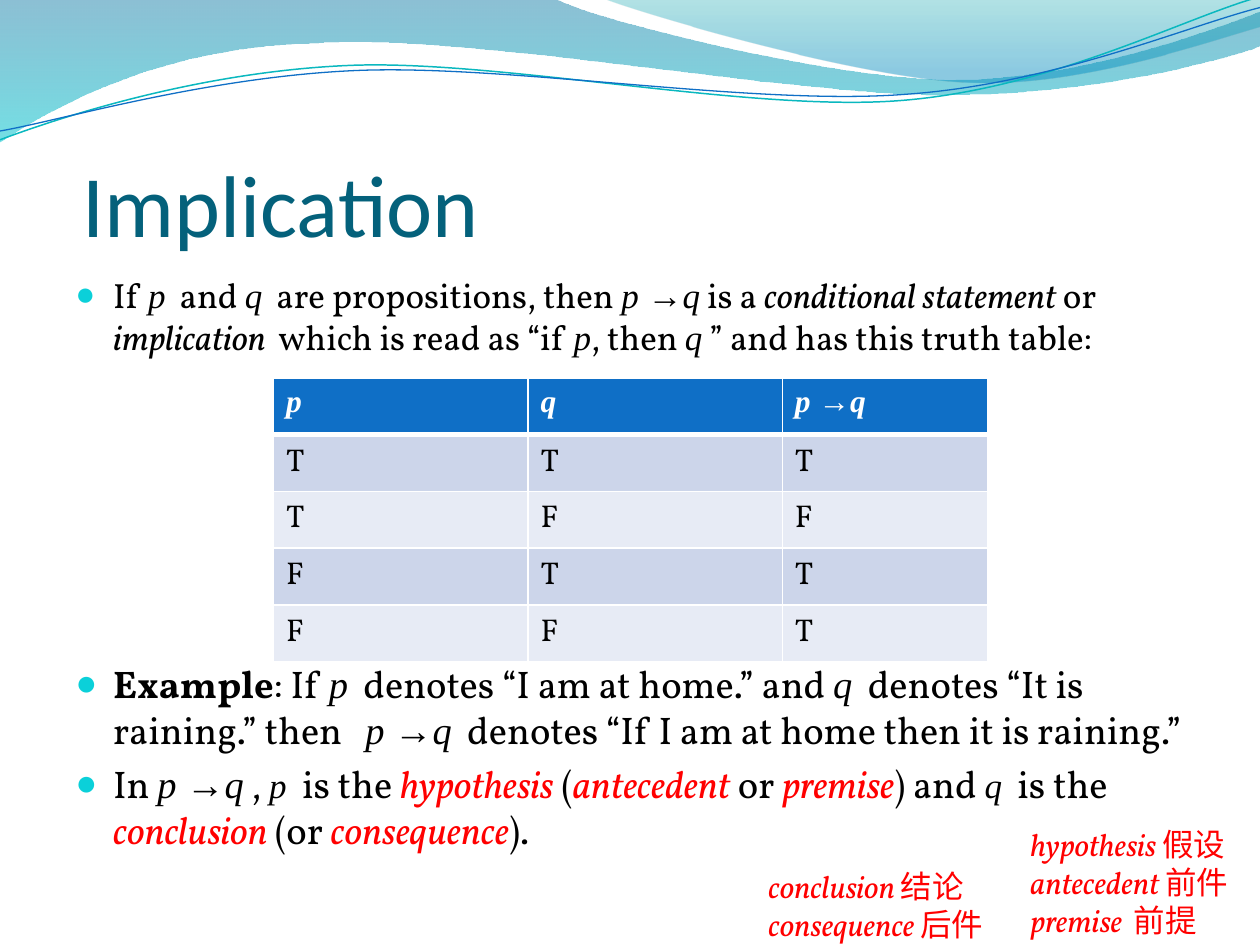
from lxml.etree import SubElement
from pptx import Presentation
from pptx.dml.color import RGBColor
from pptx.enum.text import MSO_ANCHOR
from pptx.oxml.ns import qn
from pptx.util import Inches, Pt

WHITE = RGBColor(0xFF, 0xFF, 0xFF)
BLACK = RGBColor(0x00, 0x00, 0x00)
RED = RGBColor(0xFF, 0x00, 0x00)
TITLE = RGBColor(0x04, 0x61, 0x7B)
DOT = RGBColor(0x0B, 0xD0, 0xD9)
BLUE = RGBColor(0x0F, 0x6F, 0xC6)
TEAL = RGBColor(0x0A, 0xB8, 0xBF)
BANDS = RGBColor(0xCC, 0xD5, 0xEA), RGBColor(0xE7, 0xEB, 0xF5)
DEEP = RGBColor(0x00, 0x74, 0xA1)
AQUA = RGBColor(0x00, 0xC6, 0xCF)
SEA = RGBColor(0x00, 0xA1, 0xA9)
SKY = RGBColor(0x00, 0x8B, 0xBF)

SERIF, MATH, SANS = "Vollkorn", "Times New Roman", "Calibri"
STYLES = {
    "text": (SERIF, False, False),
    "term": (SERIF, True, False),
    "key": (SERIF, True, False),
    "bold": (SERIF, False, True),
    "var": (MATH, True, False),
    "small": (MATH, True, False),
    "sign": (MATH, False, False),
    "title": (SANS, False, False),
}
ARROW = [("p ", "var"), ("→", "sign"), ("q", "var")]

INTRO = [
    ("If ", "text"), ("p", "var"), ("  and ", "text"), ("q", "var"),
    ("  are propositions, then ", "text"), *ARROW, (" is a ", "text"),
    ("conditional statement ", "term"), ("or ", "text"),
    ("implication ", "term"), (" which is read as “if ", "text"),
    ("p", "var"), (", then ", "text"), ("q", "var"),
    (" ” and has this truth table:", "text"),
]
EXAMPLE = [
    ("Example", "bold"), (": If ", "text"), ("p", "var"),
    ("  denotes “I am at home.” and ", "text"), ("q", "var"),
    ("  denotes “It is raining.” then   ", "text"), *ARROW,
    ("  denotes “If I am at home then it is raining.”", "text"),
]
PARTS = [
    ("In ", "text"), *ARROW, (" , ", "text"), ("p", "small"),
    ("  is the ", "text"), ("hypothesis", "key"), (" (", "text"),
    ("antecedent", "key"), (" or ", "text"), ("premise", "key"),
    (") and ", "text"), ("q", "small"), ("  is the ", "text"),
    ("conclusion", "key"), (" (or ", "text"), ("consequence", "key"),
    (").", "text"),
]
BODY = [(INTRO, 20, 3.4), (EXAMPLE, 22, 173), (PARTS, 22, 4.4)]
HEADS = [[("p", "var")], [("q", "var")], ARROW]
TRUTH = ["TTT", "TFF", "FTT", "FFT"]

BAND = [
    [(0, 0)],
    [(4.4, -0.01)],
    [(4.76, 0.17), (6.64, 0.63), (7.58, 0.63)],
    [(8.53, 0.63), (9.58, 0.26), (10, 0.09)],
    [(10.01, 0.36)],
    [(9.83, 0.44), (8.7, 0.76), (7.46, 0.75)],
    [(6.22, 0.75), (3.82, 0.28), (2.57, 0.34)],
    [(1.29, 0.36), (0.46, 0.83), (-0.01, 1.13)],
    [(0, 0)],
]
CREST = [
    [(4.79, -0.01)],
    [(5.09, 0.11), (6.82, 0.62), (7.69, 0.65)],
    [(8.56, 0.69), (9.61, 0.32), (10, 0.21)],
    [(10, 0)],
    [(4.79, -0.01)],
]
UPPER = [
    [(0, 1.11)],
    [(0.48, 0.93), (1.58, 0.57), (2.77, 0.52)],
    [(3.95, 0.47), (5.93, 0.89), (7.13, 0.8)],
    [(8.33, 0.71), (9.38, 0.15), (9.98, -0.02)],
]
LOWER = [
    [(0, 1.04)],
    [(0.47, 0.96), (1.64, 0.61), (2.83, 0.56)],
    [(4.03, 0.51), (5.97, 0.84), (7.17, 0.75)],
    [(8.36, 0.67), (9.41, 0.21), (10, 0.06)],
]


def trace(slide, box, steps, close):
    left, top = box
    dots = [(left + Inches(x), top + Inches(y))
            for step in steps for x, y in step]
    pen = slide.shapes.build_freeform(*dots[0])
    pen.add_line_segments(dots[1:], close=close)
    shape = pen.convert_to_shape()
    shape.shadow.inherit = False
    lines = iter(list(shape._element.iter(qn("a:lnTo"))))
    for step in steps[1:]:
        nodes = [next(lines) for _ in step]
        if len(nodes) == 3:
            nodes[0].addprevious(curve := SubElement(
                nodes[0].getparent(), qn("a:cubicBezTo")))
            for node in nodes:
                curve.append(node[0])
                node.getparent().remove(node)
    return shape


def add_waves(slide, box):
    fills = [(BAND, [(0, DEEP, 45), (1, AQUA, 55)]),
             (CREST, [(0, SEA, 30), (0.8, SKY, 45)])]
    for steps, stops in fills:
        shape = trace(slide, box, steps, True)
        shape.line.fill.background()
        shape.fill.gradient()
        shape.fill.gradient_angle = 270
        for stop, (place, color, _) in zip(shape.fill.gradient_stops, stops):
            stop.position = place
            stop.color.rgb = color
        for node, (_, _, part) in zip(shape._element.iter(qn("a:gs")), stops):
            SubElement(node[0], qn("a:alpha"), val=str(part * 1000))
    for steps, color, width in [(UPPER, TEAL, 0.85), (LOWER, BLUE, 0.75)]:
        shape = trace(slide, box, steps, False)
        shape.fill.background()
        shape.line.color.rgb = color
        shape.line.width = Pt(width)


def add_runs(par, runs, size, color=BLACK):
    for text, style in runs:
        run = par.add_run()
        run.text = text
        font = run.font
        font.name, font.italic, bold = STYLES[style]
        font.bold = bold or color == WHITE
        font.size = Pt(20 if style == "small" else size)
        font.color.rgb = RED if style == "key" else color


def add_frame(slide, box):
    frame = slide.shapes.add_textbox(*box).text_frame
    frame.word_wrap = True
    return frame


def add_pars(frame, count):
    return [frame.paragraphs[0]] + [
        frame.add_paragraph() for _ in range(count - 1)]


def add_title(slide, box):
    frame = add_frame(slide, box)
    frame.vertical_anchor = MSO_ANCHOR.BOTTOM
    frame.margin_left = frame.margin_right = frame.margin_bottom = 0
    add_runs(frame.paragraphs[0], [(" Implication", "title")], 50, TITLE)


def add_body(slide, box):
    pars = add_pars(add_frame(slide, box), len(BODY))
    for par, (runs, size, gap) in zip(pars, BODY):
        par.space_before = Pt(gap)
        props = par._p.get_or_add_pPr()
        props.set("marL", str(Inches(0.3)))
        props.set("indent", str(-Inches(0.3)))
        tint = SubElement(props, qn("a:buClr"))
        SubElement(tint, qn("a:srgbClr"), val=str(DOT))
        SubElement(props, qn("a:buSzPct"), val="95000")
        SubElement(props, qn("a:buFont"), typeface=MATH)
        SubElement(props, qn("a:buChar"), char="●")
        add_runs(par, runs, size)


def set_cell(cell, runs, fill, color, base):
    props = cell._tc.get_or_add_tcPr()
    for side, width in zip("LRTB", (1, 1, 1, base)):
        line = SubElement(props, qn("a:ln" + side), w=str(Pt(width)))
        solid = SubElement(line, qn("a:solidFill"))
        SubElement(solid, qn("a:srgbClr"), val=str(WHITE))
    cell.fill.solid()
    cell.fill.fore_color.rgb = fill
    add_runs(cell.text_frame.paragraphs[0], runs, 18, color)


def add_truth(slide, box):
    rows = [HEADS] + [[[(mark, "text")] for mark in row] for row in TRUTH]
    table = slide.shapes.add_table(len(rows), len(HEADS), *box).table
    for col, width in zip(table.columns, (2.02, 2.02, 1.63)):
        col.width = Inches(width)
    for y, row in enumerate(rows):
        table.rows[y].height = Inches(0.45)
        fill, color, base = (
            (BANDS[(y - 1) % 2], BLACK, 1) if y else (BLUE, WHITE, 3))
        for x, runs in enumerate(row):
            set_cell(table.cell(y, x), runs, fill, color, base)


def add_gloss(slide, box, terms):
    pars = add_pars(add_frame(slide, box), len(terms))
    for par, (term, gloss) in zip(pars, terms):
        add_runs(par, [(term, "key"), (gloss, "text")], 18, RED)


def main():
    deck = Presentation()
    deck.slide_width, deck.slide_height = Inches(10), Inches(7.5)
    slide = deck.slides.add_slide(deck.slide_layouts[6])
    add_waves(slide, (Inches(0), Inches(0)))
    add_title(slide, (Inches(0.5), Inches(0.77), Inches(9), Inches(1.25)))
    add_body(slide, (Inches(0.5), Inches(2.12), Inches(9), Inches(4.8)))
    add_truth(slide, (Inches(2.17), Inches(3), Inches(5.67), Inches(2.25)))
    add_gloss(slide, (Inches(8.08), Inches(6.5), Inches(2.36), Inches(0.97)),
              [("hypothesis ", "假设"), ("antecedent ", "前件"),
               ("premise  ", "前提")])
    add_gloss(slide, (Inches(6), Inches(6.83), Inches(2.22), Inches(0.71)),
              [("conclusion ", "结论"), ("consequence ", "后件")])
    deck.save("out.pptx")


if __name__ == "__main__":
    main()
